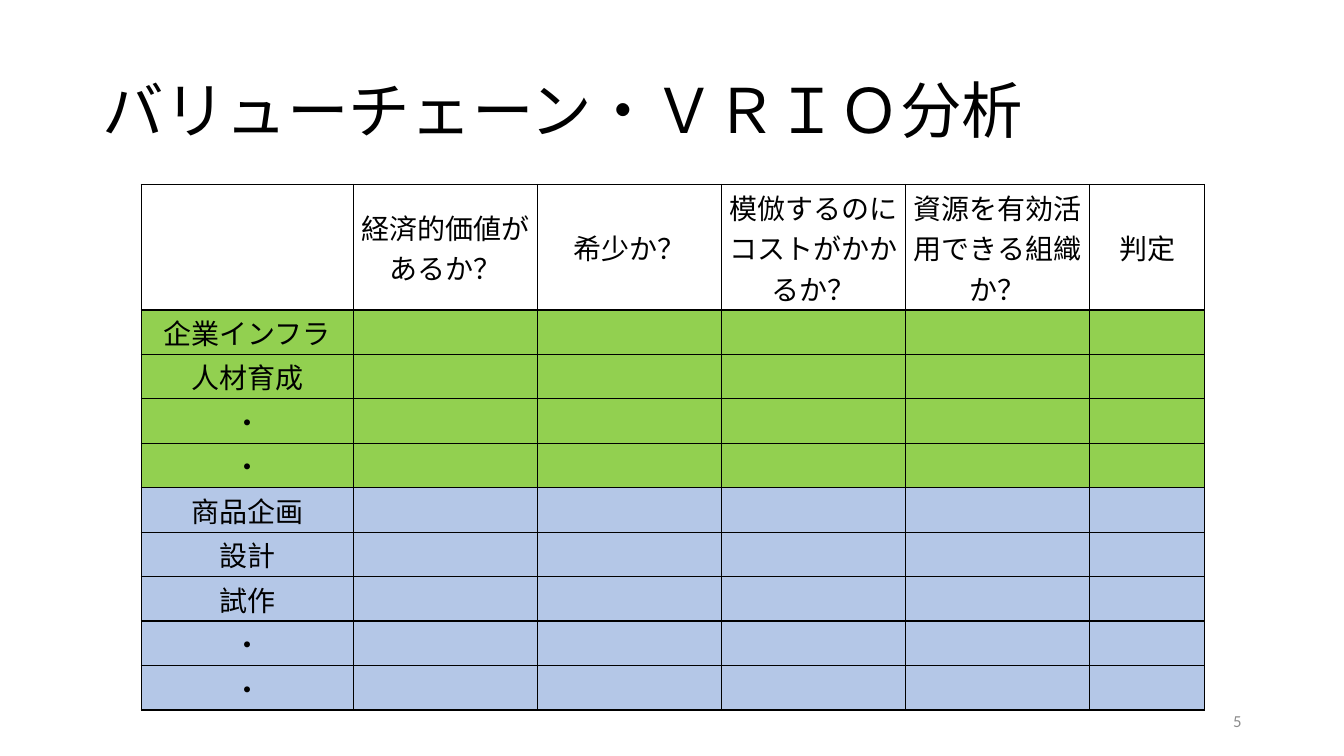
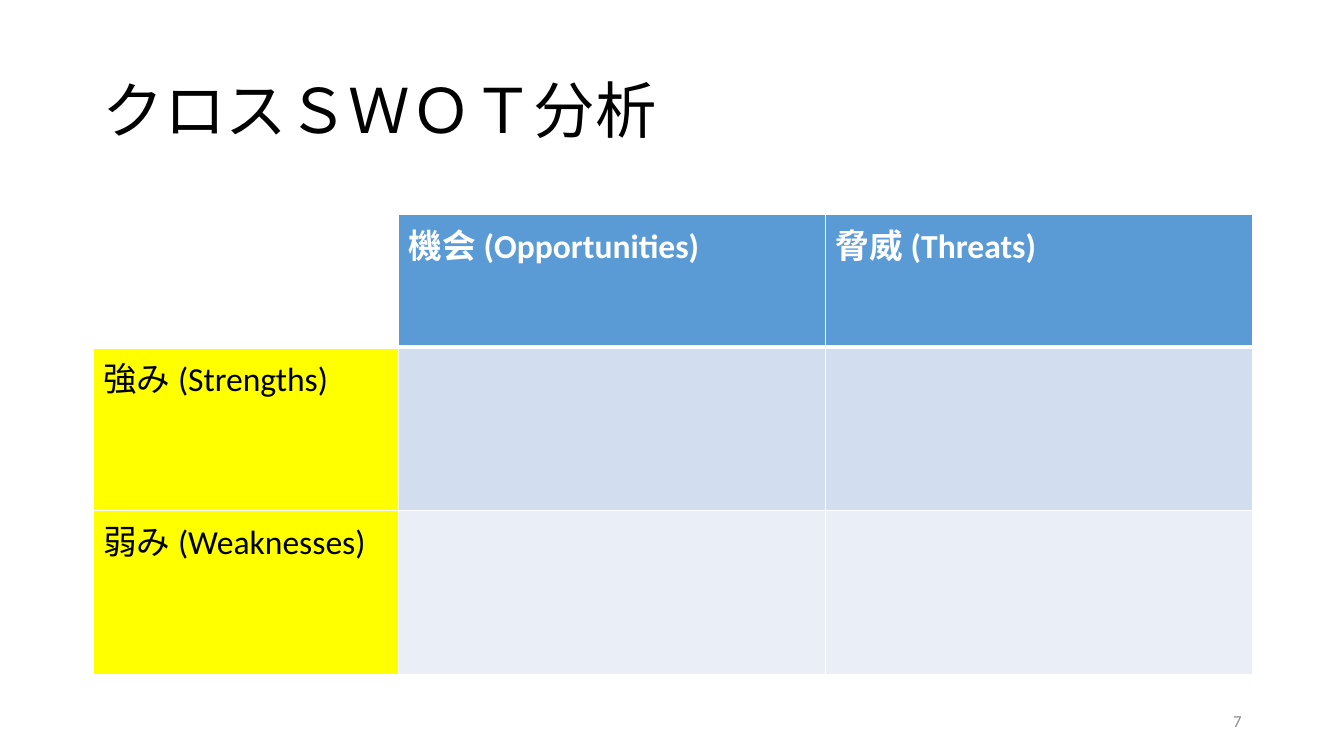
"""Build the VRIO and cross-SWOT analysis slides."""
from lxml import etree
from pptx import Presentation
from pptx.dml.color import RGBColor
from pptx.enum.text import MSO_ANCHOR, MSO_AUTO_SIZE, PP_ALIGN
from pptx.oxml.ns import qn
from pptx.util import Cm, Pt

LEFT, CENTER, RIGHT = PP_ALIGN.LEFT, PP_ALIGN.CENTER, PP_ALIGN.RIGHT
TOP, MIDDLE = MSO_ANCHOR.TOP, MSO_ANCHOR.MIDDLE
NO_AUTOFIT = MSO_AUTO_SIZE.NONE

FONT = "Calibri"
BLACK = RGBColor(0x00, 0x00, 0x00)
WHITE = RGBColor(0xFF, 0xFF, 0xFF)
GRAY = RGBColor(0x8C, 0x8C, 0x8C)
GREEN = RGBColor(0x92, 0xD0, 0x50)
LIGHT_BLUE = RGBColor(0xB4, 0xC7, 0xE7)
BLUE = RGBColor(0x5B, 0x9B, 0xD5)
YELLOW = RGBColor(0xFF, 0xFF, 0x00)
PALE = RGBColor(0xD2, 0xDE, 0xEF)
PALER = RGBColor(0xEA, 0xEF, 0xF7)

VRIO_HEADER = ["", "経済的価値があるか？", "希少か？", "模倣するのにコストがかかるか？",
               "資源を有効活用できる組織か？", "判定"]
VRIO_GROUPS = [
    (GREEN, ["企業インフラ", "人材育成", "・", "・"]),
    (LIGHT_BLUE, ["商品企画", "設計", "試作", "・", "・"]),
]
SWOT_HEADER = ["", "機会 (Opportunities)", "脅威 (Threats)"]
SWOT_ROWS = [("強み (Strengths)", PALE), ("弱み (Weaknesses)", PALER)]


def write(tf, text, size=20, color=BLACK, bold=False, align=LEFT):
    p = tf.paragraphs[0]
    p.alignment = align
    r = p.add_run()
    r.text = text
    r.font.name = FONT
    r.font.size = Pt(size)
    r.font.bold = bold
    r.font.color.rgb = color
    return p


def add_slide(prs, title, number):
    s = prs.slides.add_slide(prs.slide_layouts[5])
    sp = s.shapes.title
    sp.left, sp.top, sp.width, sp.height = Cm(2.33), Cm(1.01), Cm(29.21), Cm(3.68)
    tf = sp.text_frame
    tf.auto_size = NO_AUTOFIT
    tf.vertical_anchor = MIDDLE
    write(tf, title, size=44).line_spacing = 0.9
    tf = s.shapes.add_textbox(Cm(23.92), Cm(17.65), Cm(7.62), Cm(1.01)).text_frame
    tf.word_wrap = True
    tf.vertical_anchor = MIDDLE
    write(tf, number, size=12, color=GRAY, align=RIGHT)
    return s


def set_borders(cell, color, **widths):
    tc_pr = cell._tc.get_or_add_tcPr()
    for side in "LRTB":
        ln = etree.SubElement(tc_pr, qn(f"a:ln{side}"), w=str(Pt(widths.get(side, 1))))
        fill = etree.SubElement(ln, qn("a:solidFill"))
        etree.SubElement(fill, qn("a:srgbClr"), val=str(color))


def add_grid(s, left, top, widths, heights):
    sp = s.shapes.add_table(len(heights), len(widths), Cm(left), Cm(top),
                            Cm(sum(widths)), Cm(sum(heights)))
    for column, width in zip(sp.table.columns, widths):
        column.width = Cm(width)
    for row, height in zip(sp.table.rows, heights):
        row.height = Cm(height)
    return sp.table


def fill_cell(cell, text, fill, anchor=TOP, **text_format):
    cell.fill.solid()
    cell.fill.fore_color.rgb = fill
    cell.vertical_anchor = anchor
    if text:
        write(cell.text_frame, text, **text_format)


def vrio_slide(prs):
    s = add_slide(prs, "バリューチェーン・ＶＲＩＯ分析", "5")
    rows = [(WHITE, VRIO_HEADER)]
    rows += [(fill, [label] + [""] * 5) for fill, labels in VRIO_GROUPS for label in labels]
    table = add_grid(s, 3.56, 4.65, [5.34] + [4.64] * 4 + [2.9], [3.16] + [1.12] * 9)
    for i, (fill, texts) in enumerate(rows):
        for j, text in enumerate(texts):
            cell = table.cell(i, j)
            cell.margin_left = cell.margin_right = Cm(0.1)
            cell.margin_top = cell.margin_bottom = Cm(0.05)
            set_borders(cell, BLACK)
            fill_cell(cell, text, fill, anchor=MIDDLE, align=CENTER)


def swot_slide(prs):
    s = add_slide(prs, "クロスＳＷＯＴ分析", "7")
    rows = [[(text, BLUE if text else WHITE) for text in SWOT_HEADER]]
    rows += [[(label, YELLOW), ("", fill), ("", fill)] for label, fill in SWOT_ROWS]
    table = add_grid(s, 2.35, 5.4, [7.7, 10.76, 10.76], [3.35, 4.12, 4.12])
    for i, row in enumerate(rows):
        header = i == 0
        for j, (text, fill) in enumerate(row):
            cell = table.cell(i, j)
            set_borders(cell, WHITE, T=3 if i == 1 else 1, B=3 if header else 1)
            fill_cell(cell, text, fill, size=24, bold=header,
                      color=WHITE if header else BLACK)


def main():
    prs = Presentation()
    prs.slide_width, prs.slide_height = Cm(33.87), Cm(19.05)
    vrio_slide(prs)
    swot_slide(prs)
    prs.save("out.pptx")


if __name__ == "__main__":
    main()
